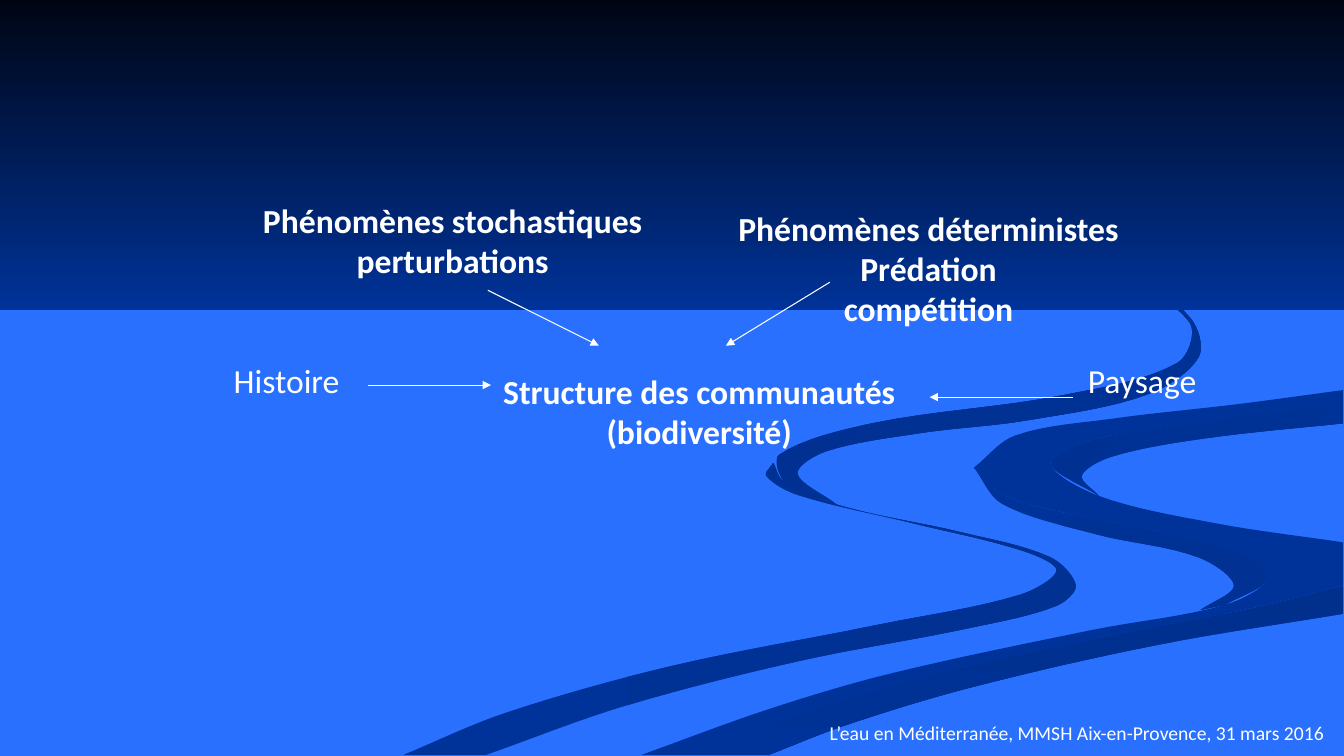
from itertools import accumulate
from math import dist

from lxml.etree import SubElement
from pptx import Presentation
from pptx.dml.color import RGBColor
from pptx.enum.shapes import MSO_CONNECTOR
from pptx.enum.text import MSO_AUTO_SIZE, PP_ALIGN
from pptx.oxml.ns import qn
from pptx.util import Inches, Pt

COLS, ROWS = 13.33, 7.5
STEPS = 8

FAR_EDGE = [(13.32, 3.87), (12.27, 4.01), (11.06, 4.15), (10.07, 4.32), (9.66, 4.64)]
LEFT_EDGE = [(9.66, 4.64), (9.93, 4.9), (10.57, 5.09), (11.61, 5.3), (12.42, 5.53), (12.57, 5.75),
             (12.15, 6), (10.83, 6.25), (8.84, 6.68), (7.64, 7.03), (6.36, 7.49)]
NEAR_EDGE = [(6.71, 7.49), (7.6, 7.19), (9.28, 6.69), (11.1, 6.29), (12.48, 6.02), (13.32, 5.81)]
RIGHT_EDGE = [(13.32, 5.38), (12.05, 5.19), (10.9, 4.92), (10.42, 4.6), (10.81, 4.37),
              (11.99, 4.18), (13.32, 4.02)]

SKY = [[(0, 0), (0, 3.08)], [(COLS, 3.08), (COLS, 0)]]
RIVER = [FAR_EDGE, LEFT_EDGE, NEAR_EDGE, RIGHT_EDGE]
INNER_BEND = [LEFT_EDGE[:7],
              [(11.91, 6.05), (12.24, 5.81), (11.89, 5.53), (10.87, 5.3), (9.94, 5), (9.66, 4.64)]]
NEAR_RIGHT_BANK = [NEAR_EDGE,
                   [(13.32, 6.09), (11.47, 6.4), (9.63, 6.82), (8.4, 7.19), (7.62, 7.49)]]
FAR_RIGHT_BANK = [RIGHT_EDGE[:1:-1],
                  [(10.9, 4.92), (10.73, 4.72), (11.03, 4.53), (11.95, 4.35), (13.32, 4.2)]]
NEAR_LEFT_BANK = [
    [(7.67, 4.59), (7.6, 4.72), (7.91, 4.91), (9.05, 5.19), (10.16, 5.47), (10.48, 5.66),
     (10.12, 5.9), (8.7, 6.2), (6.65, 6.61), (5.02, 7.07), (4, 7.49)],
    [(4.82, 7.49), (6.21, 7), (7.92, 6.56), (9.62, 6.23), (10.48, 6.01), (10.67, 5.81),
     (10.42, 5.53), (9.53, 5.28), (8.35, 5.02), (7.77, 4.77), (7.67, 4.59)]]
FAR_LEFT_BANK = [
    [(10.17, 2.33), (11.24, 2.75), (11.81, 3.16), (11.89, 3.54), (11.39, 3.91), (10.19, 4.17),
     (9.11, 4.3), (8.19, 4.48), (7.91, 4.7), (8.29, 5)],
    [(8.29, 5), (7.79, 4.79), (7.73, 4.51), (8.65, 4.2), (10.55, 3.92), (11.68, 3.6),
     (11.8, 3.2), (11.01, 2.66), (10.17, 2.33)]]


def rgb(value):
    return RGBColor.from_string(value)


def smooth(points):
    last = len(points) - 1
    knots = [0, *accumulate(dist(a, b) for a, b in zip(points, points[1:]))]

    def slope(i):
        a, b = max(i - 1, 0), min(i + 1, last)
        return [(v - u) / (knots[b] - knots[a]) for u, v in zip(points[a], points[b])]

    curve = [points[0]]
    for i in range(last):
        span = knots[i + 1] - knots[i]
        for step in range(1, STEPS + 1):
            t = step / STEPS
            blend = t * t * (3 - 2 * t)
            leave, arrive = span * t * (1 - t) ** 2, span * t * t * (t - 1)
            curve.append(tuple(
                u + blend * (v - u) + leave * m + arrive * n
                for u, v, m, n in zip(points[i], points[i + 1], slope(i), slope(i + 1))))
    return curve


class Deck:
    ink, font = "FFFFFF", "Calibri"

    def __init__(self, background):
        self.prs = Presentation()
        self.prs.slide_width, self.prs.slide_height = Inches(COLS), Inches(ROWS)
        self.s = self.prs.slides.add_slide(self.prs.slide_layouts[6])
        fill = self.s.background.fill
        fill.solid()
        fill.fore_color.rgb = rgb(background)

    def at(self, col, row):
        return (round(self.prs.slide_width * col / COLS),
                round(self.prs.slide_height * row / ROWS))

    def outline(self, edges, start, end, angle):
        first, *rest = [self.at(*point) for edge in edges for point in smooth(edge)]
        builder = self.s.shapes.build_freeform(*first)
        builder.add_line_segments(rest, close=True)
        sp = builder.convert_to_shape()
        sp.shadow.inherit = False
        sp.line.fill.background()
        sp.fill.gradient()
        sp.fill.gradient_angle = (360 - angle) % 360
        for stop, color in zip(sp.fill.gradient_stops, (start, end)):
            stop.color.rgb = rgb(color)

    def text(self, col, row, width, height, lines, align=PP_ALIGN.LEFT, size=24, bold=False):
        tf = self.s.shapes.add_textbox(*self.at(col, row), *self.at(width, height)).text_frame
        tf.word_wrap = False
        tf.auto_size = MSO_AUTO_SIZE.SHAPE_TO_FIT_TEXT
        for i, line in enumerate(lines):
            p = tf.add_paragraph() if i else tf.paragraphs[0]
            p.alignment = align
            r = p.add_run()
            r.text = line
            r.font.color.rgb = rgb(self.ink)
            for name, value in {"name": self.font, "size": Pt(size), "bold": bold}.items():
                setattr(r.font, name, value)

    def arrow(self, start, end):
        line = self.s.shapes.add_connector(MSO_CONNECTOR.STRAIGHT, *self.at(*start), *self.at(*end))
        line.line.color.rgb = rgb(self.ink)
        line.line.width = Pt(0.75)
        sp_pr = line._element.spPr
        SubElement(sp_pr.find(qn("a:ln")), qn("a:tailEnd"), type="triangle")
        SubElement(sp_pr, qn("a:effectLst"))


def main():
    deck = Deck("2970FF")
    for outline in ((NEAR_LEFT_BANK, "003399", "003193", 0), (INNER_BEND, "003399", "003193", 45),
                    (NEAR_RIGHT_BANK, "002F8C", "003399", 90), (RIVER, "003399", "003399", 0),
                    (FAR_RIGHT_BANK, "003091", "003399", 45),
                    (FAR_LEFT_BANK, "002F8E", "003399", 45), (SKY, "000514", "003399", 90)):
        deck.outline(*outline)
    for heading in ((4.84, 3.63, 4.19, 0.91, ["Structure des communautés", "(biodiversité)"]),
                    (2.46, 1.93, 4.06, 0.91, ["Phénomènes stochastiques", "perturbations"]),
                    (7.18, 2.01, 4.06, 1.31,
                     ["Phénomènes déterministes", "Prédation", "compétition"])):
        deck.text(*heading, align=PP_ALIGN.CENTER, bold=True)
    deck.text(2.22, 3.52, 1.26, 0.5, ["Histoire"])
    deck.text(10.69, 3.52, 1.29, 0.5, ["Paysage"])
    deck.text(8.13, 7.1, 5.2, 0.34,
              ["L’eau en Méditerranée, MMSH Aix-en-Provence, 31 mars 2016"], size=14)
    for start, end in (((4.84, 2.88), (5.94, 3.43)), ((8.23, 2.8), (7.2, 3.43)),
                       ((3.65, 3.82), (4.87, 3.82)), ((10.64, 3.94), (9.22, 3.94))):
        deck.arrow(start, end)
    deck.prs.save("out.pptx")


if __name__ == "__main__":
    main()
